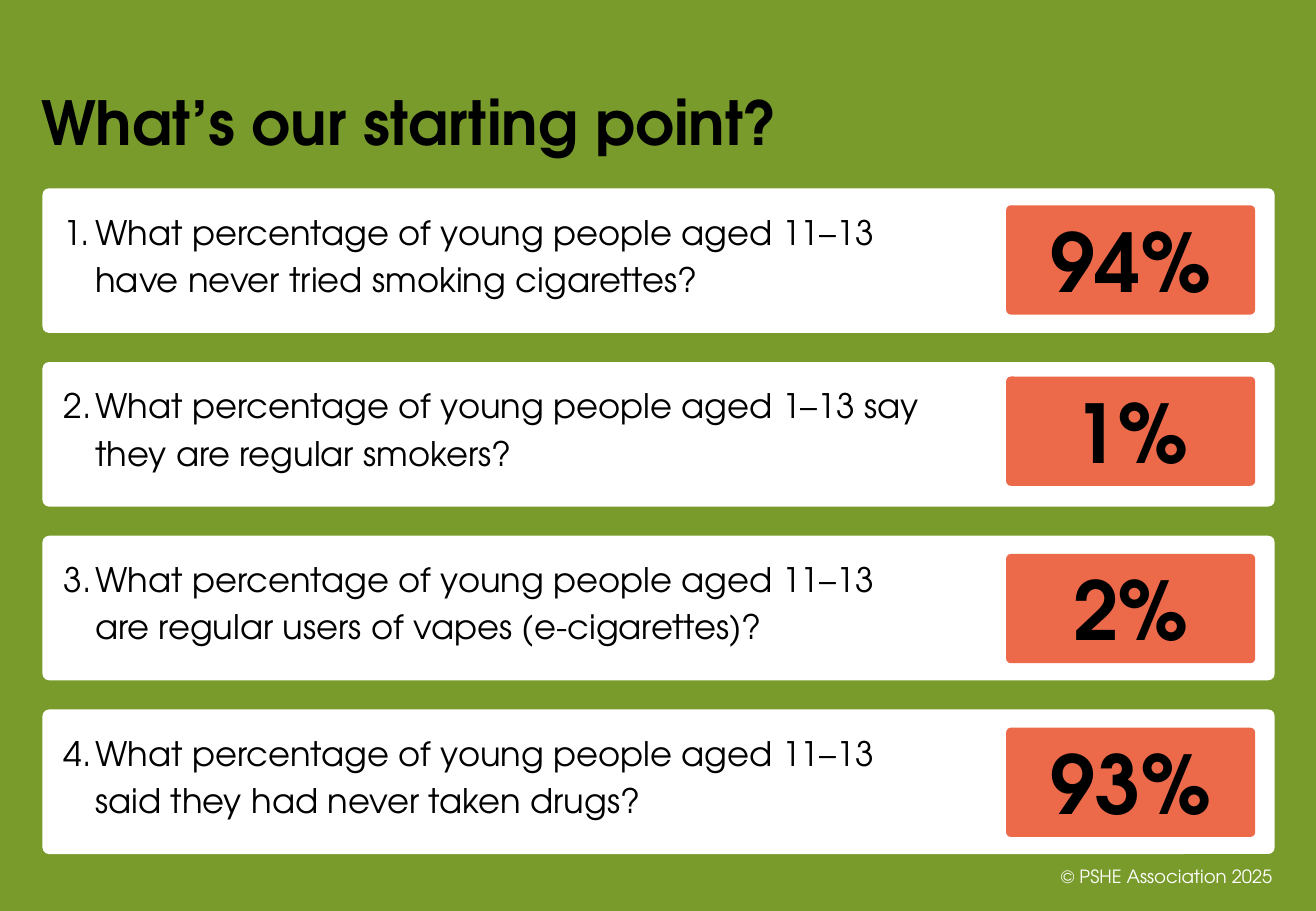
import pptx
import pptx.util
import pptx.dml.color
import pptx.enum.shapes
import pptx.enum.text
from lxml import etree

COLORS = {"page": "799B2C", "card": "FFFFFF", "answer": "EC694A",
          "ink": "000000", "credit": "FFFFFF"}
ALIGN = pptx.enum.text.PP_ALIGN
ANCHOR = pptx.enum.text.MSO_ANCHOR

# Question, answer, and how far the answer sits below the card's top
QUESTIONS = [
    ("What percentage of young people aged 11–13 have never tried smoking cigarettes?", "94%", 1.87),
    ("What percentage of young people aged 1–13 say they are regular smokers?", "1%", 1.6),
    ("What percentage of young people aged 11–13 are regular users of vapes (e-cigarettes)?", "2%", 2),
    ("What percentage of young people aged 11–13 said they had never taken drugs?", "93%", 2),
]
FIRST_CARD_TOP, CARD_PITCH = 20.67, 19.07


class QuizSlide:
    """Places elements by percentages of the slide's width and height."""
    font = "TeX Gyre Adventor"
    corner = 0.045

    def __init__(self, deck):
        self.width, self.height = deck.slide_width, deck.slide_height
        self.slide = deck.slides.add_slide(deck.slide_layouts[6])
        background = self.slide.background.fill
        background.solid()
        background.fore_color.rgb = self.color("page")

    def color(self, name):
        return pptx.dml.color.RGBColor.from_string(COLORS[name])

    def place(self, left, top, width, height):
        return [round(share * side / 100) for share, side in
                zip((left, top, width, height), (self.width, self.height) * 2)]

    def panel(self, area, fill):
        panel = self.slide.shapes.add_shape(
            pptx.enum.shapes.MSO_SHAPE.ROUNDED_RECTANGLE, *self.place(*area))
        panel.adjustments[0] = self.corner
        panel.shadow.inherit = False
        panel.fill.solid()
        panel.fill.fore_color.rgb = self.color(fill)
        panel.line.fill.background()
        return panel.text_frame

    def label(self, area):
        return self.slide.shapes.add_textbox(*self.place(*area)).text_frame

    def set_text(self, frame, text, size, color="ink", bold=False,
                 align=ALIGN.LEFT, anchor=ANCHOR.MIDDLE, leading=None):
        frame.text = text
        frame.word_wrap = True
        frame.vertical_anchor = anchor
        paragraph = frame.paragraphs[0]
        paragraph.alignment = align
        if leading:
            paragraph.line_spacing = pptx.util.Pt(leading)
        font = paragraph.runs[0].font
        font.name, font.size, font.bold = self.font, pptx.util.Pt(size), bold
        font.color.rgb = self.color(color)
        return paragraph

    def question(self, number, area, text):
        frame = self.panel(area, "card")
        frame.margin_left, frame.margin_top, frame.margin_right, frame.margin_bottom = (
            pptx.util.Inches(inset) for inset in (0.16, 0.12, 2.76, 0.05))
        paragraph = self.set_text(frame, text, 20, anchor=ANCHOR.TOP, leading=28)
        # Automatic number with a hanging indent
        properties = paragraph._p.get_or_add_pPr()
        indent = pptx.util.Inches(0.26)
        properties.set("marL", str(indent))
        properties.set("indent", str(-indent))
        etree.SubElement(properties, pptx.oxml.ns.qn("a:buFont"), typeface=self.font)
        etree.SubElement(properties, pptx.oxml.ns.qn("a:buAutoNum"),
                         type="arabicPeriod", startAt=str(number))

    def answer(self, area, text):
        self.set_text(self.panel(area, "answer"), text, 48, bold=True, align=ALIGN.CENTER)


def main():
    deck = pptx.Presentation()
    deck.slide_width = pptx.util.Inches(10.83)
    deck.slide_height = pptx.util.Inches(7.5)
    quiz = QuizSlide(deck)

    # Heading
    quiz.set_text(quiz.label((2.22, 7.87, 60.39, 10.13)), "What’s our starting point?",
                  36, bold=True, anchor=ANCHOR.BOTTOM, leading=43)

    # Question cards with their answers
    for index, (question, answer, drop) in enumerate(QUESTIONS):
        top = FIRST_CARD_TOP + index * CARD_PITCH
        quiz.question(index + 1, (3.23, top, 93.63, 15.87), question)
        quiz.answer((76.45, top + drop, 18.93, 12), answer)

    # Copyright line
    quiz.set_text(quiz.label((75.07, 93.47, 22.53, 5.33)), "© PSHE Association 2025",
                  10.8, color="credit", align=ALIGN.RIGHT)

    deck.save("out.pptx")


if __name__ == "__main__":
    main()
